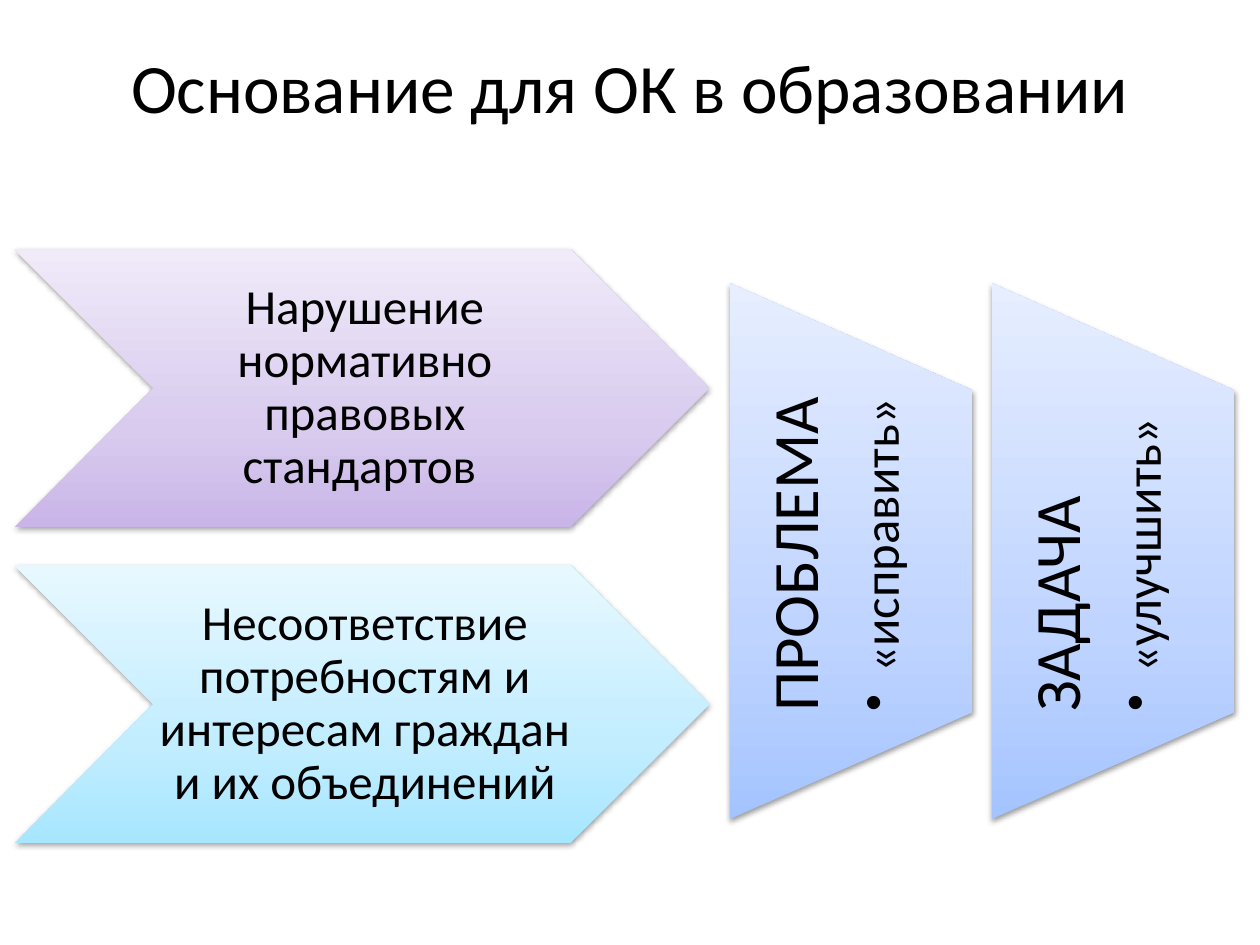
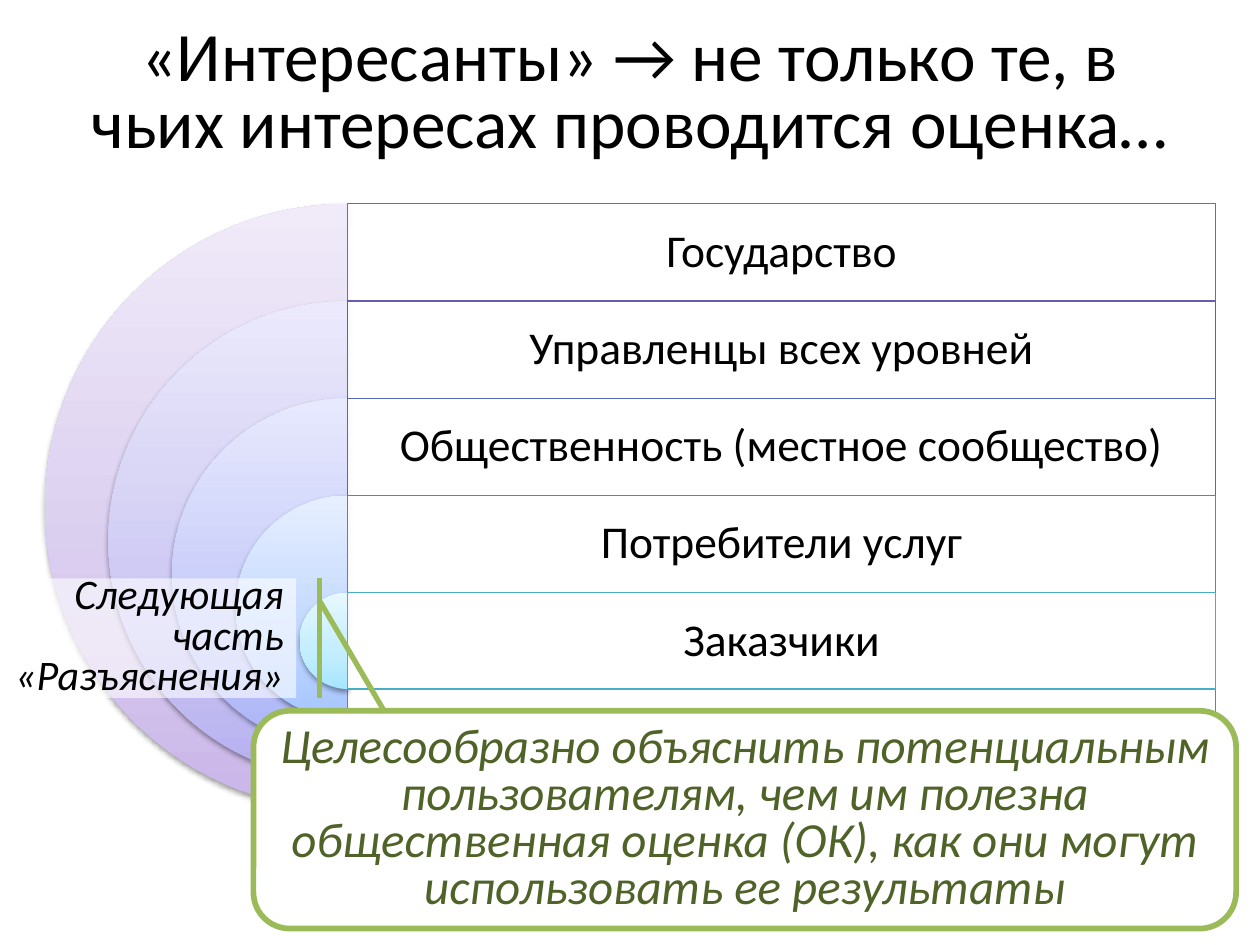
from lxml.etree import SubElement
from pptx import Presentation
from pptx.dml.color import RGBColor
from pptx.enum.shapes import MSO_SHAPE
from pptx.enum.text import MSO_ANCHOR, MSO_AUTO_SIZE, PP_ALIGN
from pptx.oxml.ns import qn
from pptx.util import Cm, Pt

FONT = "Calibri"
BLACK = RGBColor(0x00, 0x00, 0x00)
WHITE = RGBColor(0xFF, 0xFF, 0xFF)
GREEN = RGBColor(0x9B, 0xBB, 0x59)
DARK_GREEN = RGBColor(0x4F, 0x62, 0x28)


def colours(*codes):
    return [RGBColor.from_string(code) for code in codes]


# Gradients run from the bottom (0 %) through 35 % to the top (100 %).
STOPS = (0, 35, 100)
PURPLE = colours("C9B5E8", "D8CBEE", "F0EAF9")
VIOLET = colours("B6AFF0", "CBC7F3", "EBE9FB")
INDIGO = colours("A9B2F8", "C3C9F9", "E7E9FE")
BLUE = colours("A4C4FF", "BFD4FF", "E6EEFF")
SKY = colours("A5C6FF", "BFD6FF", "E6EFFF")
CYAN = colours("A7E6FF", "C1EDFF", "E7F8FF")
ROW_LINES = colours("8064A2", "685DAB", "5767B4", "5185BD", "4BACC6")


class Deck:
    """Holds the presentation, its text style and the current slide."""

    def __init__(self):
        self.presentation = Presentation()
        self.presentation.slide_width = Cm(25.4)
        self.presentation.slide_height = Cm(19.05)
        self.slide = None

    def add_slide(self, title, top, spacing=1.0):
        layout = self.presentation.slide_layouts[5]
        self.slide = self.presentation.slides.add_slide(layout)
        shape = self.slide.shapes.title
        shape.left, shape.top = Cm(1.27), Cm(top)
        shape.width, shape.height = Cm(22.86), Cm(3.18)
        self.set_text(shape, [title], 39.6, spacing=spacing)

    def set_text(self, shape, lines, size, colour=BLACK, italic=False,
                 align=PP_ALIGN.CENTER, spacing=0.9, insets=None):
        frame = shape.text_frame
        frame.text = "\n".join(lines)
        frame.word_wrap = True
        frame.auto_size = MSO_AUTO_SIZE.NONE
        frame.vertical_anchor = MSO_ANCHOR.MIDDLE
        if insets:
            (frame.margin_left, frame.margin_top,
             frame.margin_right, frame.margin_bottom) = map(Cm, insets)
        for paragraph in frame.paragraphs:
            paragraph.alignment = align
            paragraph.line_spacing = spacing
            for run in paragraph.runs:
                run.font.name = FONT
                run.font.size = Pt(size)
                run.font.italic = italic
                run.font.color.rgb = colour

    def text(self, left, top, width, height, lines, size, **style):
        box = self.slide.shapes.add_textbox(Cm(left), Cm(top), Cm(width), Cm(height))
        self.set_text(box, lines, size, **style)
        return box

    def upward_text(self, left, top, width, height, heading, bullet):
        """Add text read from bottom to top: a heading and one bullet."""
        box = self.text(left, top, width, height, [heading, bullet], 37,
                        align=PP_ALIGN.LEFT, insets=(0.66, 0, 0.66, 0))
        frame = box.text_frame
        frame.vertical_anchor = MSO_ANCHOR.TOP
        box.element.txBody.find(qn("a:bodyPr")).set("vert", "vert270")
        first, second = frame.paragraphs
        first.space_after = Pt(13)
        second.level = 1
        second.runs[0].font.size = Pt(29)
        properties = second._p.get_or_add_pPr()
        properties.set("marL", str(Cm(0.79)))
        properties.set("indent", str(-Cm(0.79)))
        SubElement(properties, qn("a:buChar"), char="•")

    def shape(self, kind, left, top, width, height):
        shape = self.slide.shapes.add_shape(
            kind, Cm(left), Cm(top), Cm(width), Cm(height))
        shape.shadow.inherit = False
        return shape

    def gradient_shape(self, kind, left, top, width, height, gradient, rotation=0):
        """Add a shadowed shape without outline whose gradient stays upright."""
        shape = self.shape(kind, left, top, width, height)
        shape.rotation = rotation
        shape.line.fill.background()
        shape.fill.gradient()
        shape.fill.gradient_angle = 90
        properties = shape.element.spPr
        fill = properties.find(qn("a:gradFill"))
        fill.set("rotWithShape", "0")
        stops = fill.find(qn("a:gsLst"))
        for stop in list(stops):
            stops.remove(stop)
        for position, colour in zip(STOPS, gradient):
            stop = SubElement(stops, qn("a:gs"), pos=str(position * 1000))
            SubElement(stop, qn("a:srgbClr"), val=str(colour))
        shadow = SubElement(
            properties.find(qn("a:effectLst")), qn("a:outerShdw"),
            blurRad=str(Pt(3.1)), dist=str(Pt(1.6)), dir="5400000", rotWithShape="0")
        tint = SubElement(shadow, qn("a:srgbClr"), val=str(BLACK))
        SubElement(tint, qn("a:alpha"), val="38000")
        return shape

    def white_shape(self, kind, left, top, width, height, line, weight, opacity=100):
        shape = self.shape(kind, left, top, width, height)
        shape.fill.solid()
        shape.fill.fore_color.rgb = WHITE
        shape.line.color.rgb = line
        shape.line.width = Pt(weight)
        if opacity < 100:
            colour = shape.element.spPr.find(qn("a:solidFill")).find(qn("a:srgbClr"))
            SubElement(colour, qn("a:alpha"), val=str(opacity * 1000))
        return shape


def build_grounds_slide(deck):
    deck.add_slide("Основание для ОК в образовании", 0.13)
    grounds = [
        ("Нарушение нормативно правовых стандартов ", PURPLE),
        ("Несоответствие потребностям и интересам граждан и их объединений", CYAN),
    ]
    for index, (ground, gradient) in enumerate(grounds):
        top = 5.03 + 6.37 * index
        deck.gradient_shape(MSO_SHAPE.CHEVRON, 0.3, top, 14, 5.59, gradient)
        deck.text(3.1, top, 8.41, 5.59, [ground], 28, insets=(0.1, 0.05, 0, 0.05))

    outcomes = [("ПРОБЛЕМА", "«исправить»"), ("ЗАДАЧА", "«улучшить»")]
    for index, (heading, bullet) in enumerate(outcomes):
        shift = 5.28 * index
        deck.gradient_shape(MSO_SHAPE.FLOWCHART_MANUAL_OPERATION,
                            11.76 + shift, 8.66, 10.8, 4.9, BLUE, rotation=270)
        deck.upward_text(14.71 + shift, 7.87, 4.9, 6.48, heading, bullet)


def build_stakeholders_slide(deck):
    deck.add_slide("«Интересанты» → не только те, в чьих интересах проводится оценка…",
                   0.33, spacing=0.8)
    stakeholders = [
        "Государство",
        "Управленцы всех уровней",
        "Общественность (местное сообщество)",
        "Потребители услуг",
        "Заказчики",
    ]
    gradients = [PURPLE, VIOLET, INDIGO, SKY, CYAN]
    centre, row_width, row_height = 7.01, 17.5, 1.96
    rows = zip(stakeholders, gradients, ROW_LINES)
    for index, (stakeholder, gradient, line) in enumerate(rows):
        top = 4.11 + row_height * index
        diameter = 12.22 - 2.57 * index
        half_disc = deck.gradient_shape(MSO_SHAPE.PIE, centre - diameter / 2, top,
                                        diameter, diameter, gradient)
        half_disc.adjustments[0] = 54
        half_disc.adjustments[1] = 162
        deck.white_shape(MSO_SHAPE.RECTANGLE, centre, top, row_width, diameter,
                         line, 0.75, opacity=90)
        deck.text(centre, top, row_width, row_height, [stakeholder], 26,
                  insets=(0.28,) * 4)

    advice = deck.white_shape(MSO_SHAPE.ROUNDED_RECTANGLE, 5.11, 14.33, 19.81, 4.39,
                              GREEN, 3.25)
    deck.set_text(advice, ["Целесообразно объяснить потенциальным пользователям, чем им "
                           "полезна общественная оценка (ОК), как они могут использовать "
                           "ее результаты"],
                  28, colour=DARK_GREEN, italic=True, spacing=0.8)

    callout = deck.white_shape(MSO_SHAPE.LINE_CALLOUT_1_ACCENT_BAR, 0, 11.66, 5.97, 2.41,
                               GREEN, 3, opacity=60)
    callout.element.spPr.find(qn("a:xfrm")).set("flipH", "1")
    for index, value in enumerate((0.19, -0.08, 1.12, -0.3)):
        callout.adjustments[index] = value
    deck.set_text(callout, ["Следующая", "часть «Разъяснения»"], 24, italic=True,
                  align=PP_ALIGN.RIGHT, spacing=0.8)


def main():
    deck = Deck()
    build_grounds_slide(deck)
    build_stakeholders_slide(deck)
    deck.presentation.save("out.pptx")


if __name__ == "__main__":
    main()
